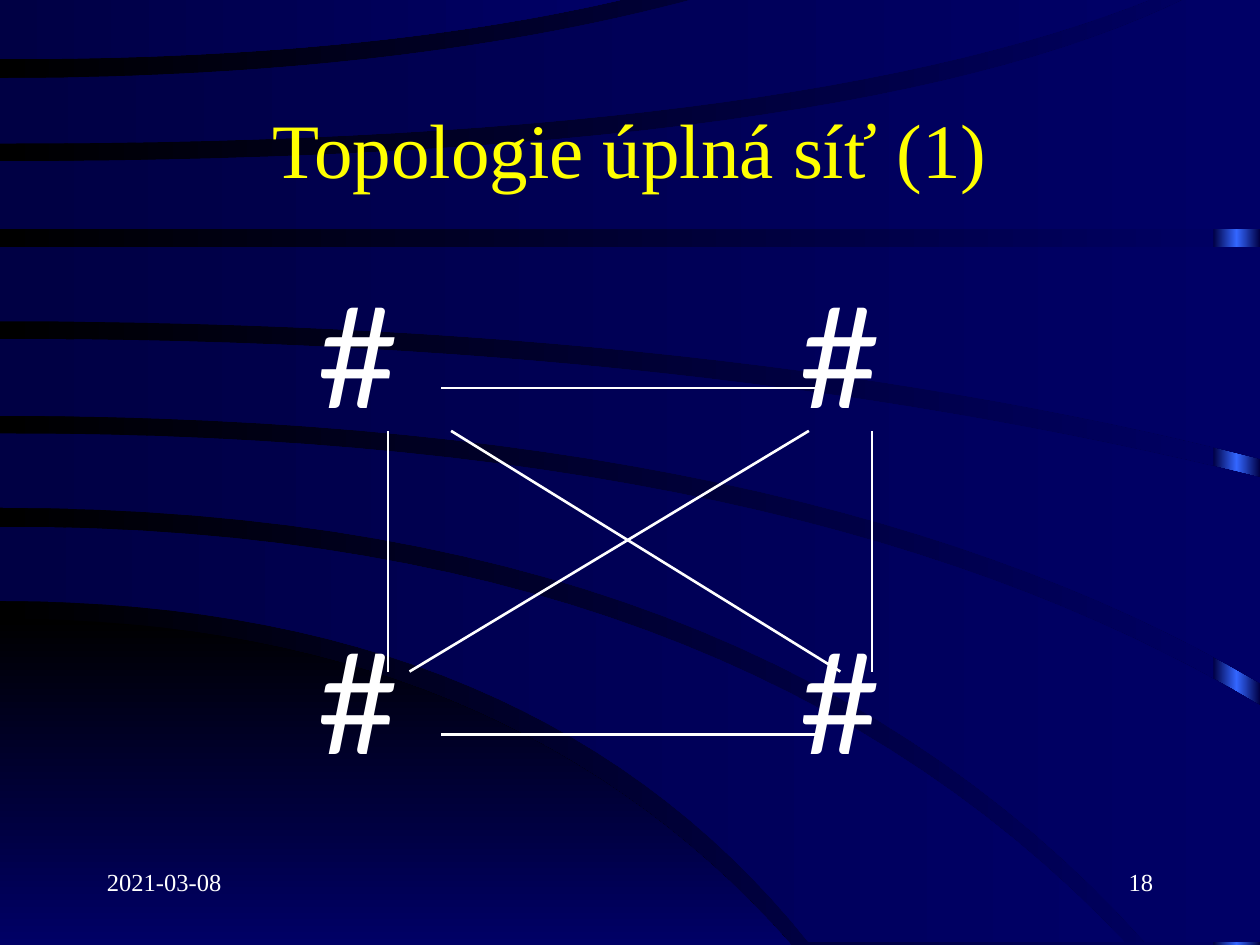
"""Build a slide showing a fully meshed network of four nodes over a curved dark backdrop."""
from copy import deepcopy
from dataclasses import dataclass
from itertools import product

from pptx import Presentation
from pptx import util as u
from pptx.dml.color import RGBColor
from pptx.enum import shapes, text
from pptx.oxml import ns
from pptx.oxml.xmlchemy import OxmlElement

BLACK = RGBColor(0x00, 0x00, 0x00)
NAVY = RGBColor(0x00, 0x00, 0x44)
BLUE = RGBColor(0x00, 0x00, 0x66)
BRIGHT = RGBColor(0x33, 0x66, 0xFF)
WHITE = RGBColor(0xFF, 0xFF, 0xFF)
YELLOW = RGBColor(0xFF, 0xFF, 0x00)
SERIF = "Times New Roman"
NODE_FONT = "Lato"
NODE_COLUMNS = (2.42, 6.25)
NODE_ROWS = (2.08, 4.83)
CURVE_STEPS = 30
TOP, BOTTOM = -0.02, 7.48


@dataclass(frozen=True)
class Edge:
    """A quadratic curve that leaves the left side level and bends at a control point."""

    y: float
    bend: float
    end_x: float
    end_y: float

    def points(self) -> list[tuple[float, float]]:
        """Return evenly stepped points from left to right."""
        steps = [i / CURVE_STEPS for i in range(CURVE_STEPS + 1)]
        return [(2 * t * (1 - t) * self.bend + t * t * self.end_x,
                 self.y + t * t * (self.end_y - self.y)) for t in steps]


@dataclass(frozen=True)
class Band:
    """A curved backdrop area between two edges."""

    upper: Edge
    lower: Edge
    corner: tuple[tuple[float, float], ...] = ()
    start: RGBColor = NAVY
    angle: int = 0


@dataclass(frozen=True)
class Link:
    """A straight link between two nodes, in inches."""

    x1: float
    y1: float
    x2: float
    y2: float


BANDS = (
    Band(Edge(4.91, 4, 6.28, 7.5), Edge(7.5, 3, 6.28, 7.5), start=BLACK, angle=270),
    Band(Edge(4.18, 5.8, 8.93, BOTTOM), Edge(4.77, 4.25, 6.42, BOTTOM)),
    Band(Edge(3.44, 6.4, 10, 5.6), Edge(4.03, 6, 9.09, BOTTOM), ((10, BOTTOM),)),
    Band(Edge(2.69, 5.55, 10, 3.79), Edge(3.3, 6.4, 10, 5.42)),
    Band(Edge(1.96, 5, 10, 1.96), Edge(2.55, 5.75, 10, 3.64)),
    Band(Edge(1.28, 6.8, 9.43, TOP), Edge(1.82, 5, 10, 1.82), ((10, TOP),)),
    Band(Edge(0.62, 3.2, 5.56, TOP), Edge(1.14, 6.3, 9.17, TOP)),
    Band(Edge(TOP, 2.5, 5.01, TOP), Edge(0.47, 2.95, 5.01, TOP)),
)

LINKS = (
    Link(3.08, 3.42, 3.08, 5.33),
    Link(3.5, 5.83, 6.5, 5.83),
    Link(6.92, 5.33, 6.92, 3.42),
    Link(3.5, 3.08, 6.5, 3.08),
    Link(3.58, 3.42, 6.67, 5.33),
    Link(6.42, 3.42, 3.25, 5.33),
)


def set_gradient(fill, colors: tuple[RGBColor, ...], angle: int = 0) -> None:
    """Spread two colours evenly along a linear gradient."""
    fill.gradient()
    fill.gradient_angle = angle
    for i, (stop, color) in enumerate(zip(fill.gradient_stops, colors)):
        stop.color.rgb = color
        stop.position = i / (len(colors) - 1)


def add_band(s, band: Band) -> None:
    """Draw one curved backdrop area."""
    outline = [*band.upper.points(), *band.corner, *reversed(band.lower.points())]
    points = [(u.Inches(x), u.Inches(y)) for x, y in outline]
    builder = s.shapes.build_freeform(*points[0])
    builder.add_line_segments(points[1:], close=True)
    sp = builder.convert_to_shape()
    sp.shadow.inherit = False
    sp.line.fill.background()
    set_gradient(sp.fill, (band.start, BLUE), band.angle)


def add_glow(s) -> None:
    """Draw the bright strip along the right edge."""
    sp = s.shapes.add_shape(shapes.MSO_SHAPE.RECTANGLE, u.Inches(9.63), u.Inches(0),
                            u.Inches(0.37), u.Inches(7.5))
    sp.shadow.inherit = False
    sp.line.fill.background()
    set_gradient(sp.fill, (NAVY, NAVY))
    stops = sp._element.spPr.find(".//" + ns.qn("a:gsLst"))
    stops.insert(1, deepcopy(stops[0]))
    middle = sp.fill.gradient_stops[1]
    middle.color.rgb = BRIGHT
    middle.position = 0.5


def add_text(s, content: str, x: float, y: float, w: float, h: float, *, size: int,
             font: str = SERIF, color: RGBColor = WHITE, align=text.PP_ALIGN.LEFT,
             anchor=text.MSO_ANCHOR.TOP, wrap: bool = True,
             fit=text.MSO_AUTO_SIZE.NONE) -> None:
    """Add a one-line text box."""
    tf = s.shapes.add_textbox(*map(u.Inches, (x, y, w, h))).text_frame
    tf.word_wrap, tf.auto_size, tf.vertical_anchor = wrap, fit, anchor
    p = tf.paragraphs[0]
    p.alignment = align
    r = p.add_run()
    r.text = content
    r.font.size, r.font.name = u.Pt(size), font
    r.font.color.rgb = color


def add_link(s, link: Link) -> None:
    """Draw one link line."""
    ends = map(u.Inches, (link.x1, link.y1, link.x2, link.y2))
    line = s.shapes.add_connector(shapes.MSO_CONNECTOR.STRAIGHT, *ends)
    line.line.color.rgb = WHITE
    line.line.width = u.Pt(1.5)
    line._element.spPr.append(OxmlElement("a:effectLst"))


def main() -> None:
    """Assemble and save the slide."""
    prs = Presentation()
    prs.slide_width, prs.slide_height = u.Inches(10), u.Inches(7.5)
    s = prs.slides.add_slide(prs.slide_layouts[6])
    set_gradient(s.background.fill, (BLACK, BLUE))
    add_glow(s)
    for band in BANDS:
        add_band(s, band)
    add_text(s, "2021-03-08", 0.75, 6.83, 2.08, 0.5, size=14)
    add_text(s, "18", 7.17, 6.83, 2.08, 0.5, size=14, align=text.PP_ALIGN.RIGHT)
    add_text(s, "Topologie úplná síť (1)", 0.75, 0.42, 8.5, 1.5, size=44, color=YELLOW,
             align=text.PP_ALIGN.CENTER, anchor=text.MSO_ANCHOR.MIDDLE)
    for y, x in product(NODE_ROWS, NODE_COLUMNS):
        add_text(s, "#", x, y, 1.31, 1.43, size=80, font=NODE_FONT, wrap=False,
                 fit=text.MSO_AUTO_SIZE.SHAPE_TO_FIT_TEXT)
    for link in LINKS:
        add_link(s, link)
    prs.save("out.pptx")


if __name__ == "__main__":
    main()
